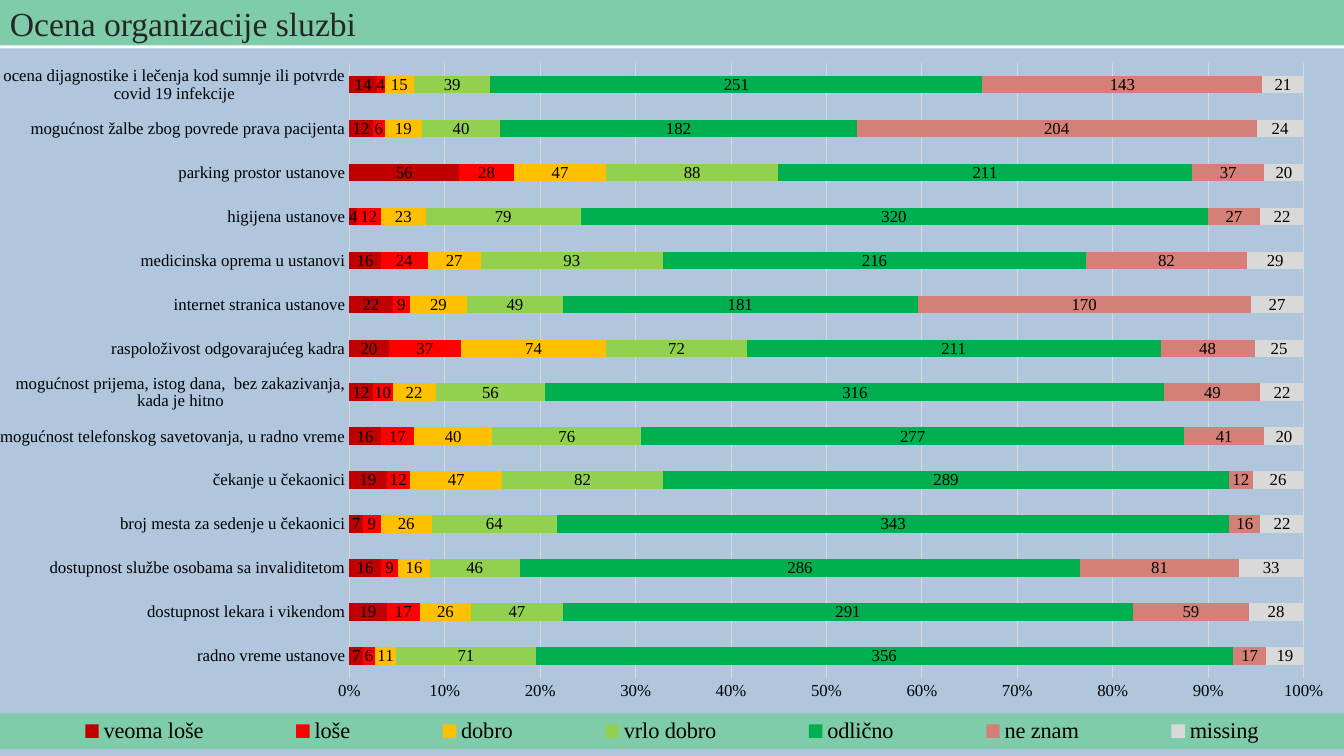
from dataclasses import dataclass

from lxml.etree import SubElement
from pptx import Presentation
from pptx.chart.data import CategoryChartData
from pptx.dml.color import RGBColor
from pptx.enum.chart import (XL_CHART_TYPE as ChartType, XL_LABEL_POSITION as LabelPosition,
                             XL_LEGEND_POSITION as LegendPosition, XL_TICK_MARK as TickMark)
from pptx.enum.shapes import MSO_SHAPE as Shape
from pptx.enum.text import MSO_ANCHOR as Anchor, PP_ALIGN as Align
from pptx.oxml import parse_xml
from pptx.oxml.ns import nsdecls, qn
from pptx.util import Inches, Pt

TITLE = "Ocena organizacije sluzbi"
CATEGORIES = [
    "radno vreme ustanove",
    "dostupnost lekara i vikendom",
    "dostupnost službe osobama sa invaliditetom",
    "broj mesta za sedenje u čekaonici",
    "čekanje u čekaonici",
    "mogućnost telefonskog savetovanja, u radno vreme",
    "mogućnost prijema, istog dana,  bez zakazivanja, kada je hitno",
    "raspoloživost odgovarajućeg kadra",
    "internet stranica ustanove",
    "medicinska oprema u ustanovi",
    "higijena ustanove",
    "parking prostor ustanove",
    "mogućnost žalbe zbog povrede prava pacijenta",
    "ocena dijagnostike i lečenja kod sumnje ili potvrde covid 19 infekcije",
]
RATINGS = [
    ("veoma loše", "C00000", [7, 19, 16, 7, 19, 16, 12, 20, 22, 16, 4, 56, 12, 14]),
    ("loše", "FF0000", [6, 17, 9, 9, 12, 17, 10, 37, 9, 24, 12, 28, 6, 4]),
    ("dobro", "FFC000", [11, 26, 16, 26, 47, 40, 22, 74, 29, 27, 23, 47, 19, 15]),
    ("vrlo dobro", "92D050", [71, 47, 46, 64, 82, 76, 56, 72, 49, 93, 79, 88, 40, 39]),
    ("odlično", "00B050",
     [356, 291, 286, 343, 289, 277, 316, 211, 181, 216, 320, 211, 182, 251]),
    ("ne znam", "D47F77", [17, 59, 81, 16, 12, 41, 49, 48, 170, 82, 27, 37, 204, 143]),
    ("missing", "D9D9D9", [19, 28, 33, 22, 26, 20, 22, 25, 27, 29, 22, 20, 24, 21]),
]


@dataclass(frozen=True)
class Theme:
    font: str = "Times New Roman"
    band: str = "7FCCAB"
    panel: str = "AFC6DD"
    grid: str = "D9D9D9"
    heading: str = "262626"
    ink: str = "000000"
    heading_size: int = 24
    legend_size: int = 16
    label_size: int = 12


THEME = Theme()
WIDTH, HEIGHT = 13.33, 7.5
BAND_HEIGHT, CHART_TOP = 0.45, 0.48
# Left, top, width and height as fractions of the chart
PLOT_AREA = (0.26, 0.02, 0.71, 0.87)
LEGEND_AREA = (0, 0.94, 1, 0.05)


def style_font(font, size, color=THEME.ink):
    font.name = THEME.font
    font.size = Pt(size)
    font.bold = False
    font.color.rgb = RGBColor.from_string(color)


def style_line(line, color):
    line.color.rgb = RGBColor.from_string(color)
    line.width = Pt(0.75)


def solid_properties(color):
    return parse_xml(f'<c:spPr {nsdecls("c", "a")}><a:solidFill><a:srgbClr val="{color}"/>'
                     '</a:solidFill><a:ln><a:noFill/></a:ln></c:spPr>')


def manual_layout(area, inner=False):
    layout = parse_xml(f'<c:layout {nsdecls("c")}><c:manualLayout/></c:layout>')
    settings = [("layoutTarget", "inner")] if inner else []
    settings += [("xMode", "edge"), ("yMode", "edge"), *zip("xywh", area)]
    for tag, value in settings:
        SubElement(layout[0], qn(f"c:{tag}")).set("val", str(value))
    return layout


def remove_layout(element):
    for layout in element.findall(qn("c:layout")):
        element.remove(layout)


def add_title(page):
    box = page.shapes.add_shape(Shape.RECTANGLE, 0, 0, Inches(WIDTH), Inches(BAND_HEIGHT))
    box.shadow.inherit = False
    box.fill.solid()
    box.fill.fore_color.rgb = RGBColor.from_string(THEME.band)
    box.line.fill.background()
    frame = box.text_frame
    frame.word_wrap = True
    frame.vertical_anchor = Anchor.MIDDLE
    para = frame.paragraphs[0]
    para.alignment = Align.LEFT
    span = para.add_run()
    span.text = TITLE
    style_font(span.font, THEME.heading_size, THEME.heading)


def add_ratings_chart(page):
    data = CategoryChartData()
    data.categories = CATEGORIES
    for name, _, values in RATINGS:
        data.add_series(name, values)
    chart = page.shapes.add_chart(
        ChartType.BAR_STACKED_100, 0, Inches(CHART_TOP),
        Inches(WIDTH), Inches(HEIGHT - CHART_TOP), data).chart
    chart.has_title = False
    style_font(chart.font, THEME.label_size)
    style_bars(chart.plots[0])
    style_axes(chart)
    style_legend(chart)

    plot_area = chart.element.chart.plotArea
    remove_layout(plot_area)
    plot_area.insert(0, manual_layout(PLOT_AREA, inner=True))
    chart.element.chart.addnext(solid_properties(THEME.panel))


def style_bars(plot):
    plot.gap_width = 150
    plot.overlap = 100
    plot.vary_by_categories = False
    for series, (_, color, _) in zip(plot.series, RATINGS):
        series.format.fill.solid()
        series.format.fill.fore_color.rgb = RGBColor.from_string(color)
        labels = series.data_labels
        labels.show_value = True
        labels.position = LabelPosition.CENTER
        style_font(labels.font, THEME.label_size)


def style_axes(chart):
    for axis in (chart.category_axis, chart.value_axis):
        axis.major_tick_mark = axis.minor_tick_mark = TickMark.NONE
        style_font(axis.tick_labels.font, THEME.label_size)
    style_line(chart.category_axis.format.line, THEME.grid)
    values = chart.value_axis
    values.format.line.fill.background()
    values.minimum_scale, values.maximum_scale, values.major_unit = 0, 1, 0.1
    values.tick_labels.number_format = "0%"
    values.tick_labels.number_format_is_linked = False
    values.has_major_gridlines = True
    style_line(values.major_gridlines.format.line, THEME.grid)


def style_legend(chart):
    chart.has_legend = True
    legend = chart.legend
    legend.position = LegendPosition.BOTTOM
    legend.include_in_layout = False
    style_font(legend.font, THEME.legend_size)
    element = chart.element.chart.find(qn("c:legend"))
    remove_layout(element)
    overlay = element.find(qn("c:overlay"))
    overlay.addprevious(manual_layout(LEGEND_AREA))
    overlay.addnext(solid_properties(THEME.band))


def main():
    deck = Presentation()
    deck.slide_width, deck.slide_height = Inches(WIDTH), Inches(HEIGHT)
    page = deck.slides.add_slide(deck.slide_layouts[6])
    add_title(page)
    add_ratings_chart(page)
    deck.save("out.pptx")


if __name__ == "__main__":
    main()
